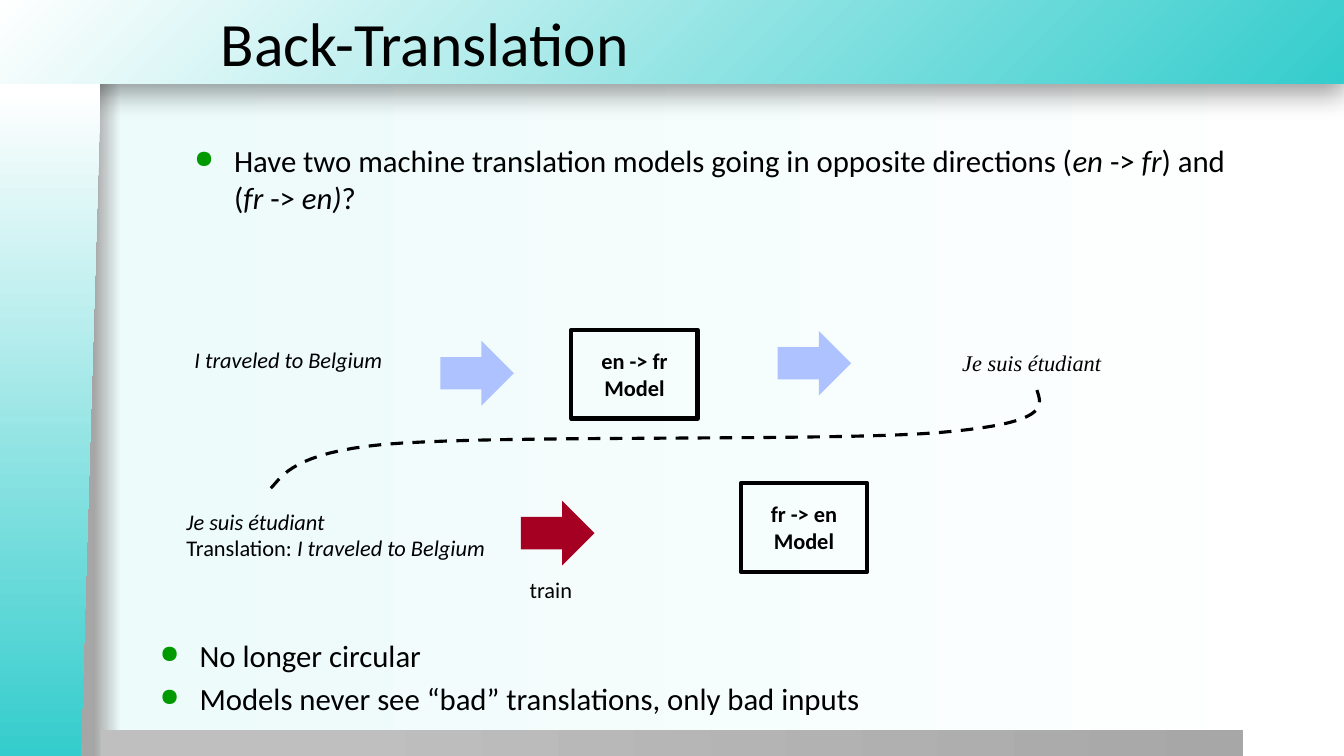
from lxml import etree
from pptx import Presentation
from pptx.dml.color import RGBColor
from pptx.enum.dml import MSO_LINE
from pptx.enum.shapes import MSO_SHAPE as Shape
from pptx.enum.text import MSO_ANCHOR as Anchor, PP_ALIGN as Align
from pptx.oxml import parse_xml
from pptx.oxml.ns import nsdecls, qn
from pptx.util import Cm, Pt

TEAL, WHITE, BLACK = "34CCCC", "FFFFFF", "000000"
BLUE, RED, GREEN = "ADC2FF", "A50021", "009900"
EN, FR = "I traveled to Belgium", "Je suis étudiant"


def color(value):
    return RGBColor.from_string(value)


def set_gradient(fill, parent, stops, direction):
    fill.solid()
    stop_xml = "".join(
        f'<a:gs pos="{position * 1000}"><a:srgbClr val="{value}"/></a:gs>'
        for position, value in stops
    )
    gradient = parse_xml(
        f'<a:gradFill {nsdecls("a")} rotWithShape="1">'
        f"<a:gsLst>{stop_xml}</a:gsLst>{direction}</a:gradFill>"
    )
    parent.replace(parent.find(qn("a:solidFill")), gradient)


def linear(degrees):
    return f'<a:lin ang="{degrees * 60000}" scaled="0"/>'


def add_block(page, kind, box, fill=None):
    block = page.shapes.add_shape(kind, *map(Cm, box))
    block.shadow.inherit = False
    block.line.fill.background()
    if fill:
        block.fill.solid()
        block.fill.fore_color.rgb = color(fill)
    else:
        block.fill.background()
    return block


def add_bullet(para):
    properties = para._p.get_or_add_pPr()
    properties.set("marL", str(Cm(1)))
    properties.set("indent", str(-Cm(1)))
    bullet_color = etree.SubElement(properties, qn("a:buClr"))
    etree.SubElement(bullet_color, qn("a:srgbClr"), val=GREEN)
    etree.SubElement(properties, qn("a:buSzPct"), val="80000")
    etree.SubElement(properties, qn("a:buChar"), char="●")


def write(frame, lines, size, font="Calibri", bold=False, bullets=False, align=Align.LEFT):
    for index, spans in enumerate(lines):
        para = frame.paragraphs[0] if index == 0 else frame.add_paragraph()
        if bullets:
            add_bullet(para)
            if index:
                para.space_before = Pt(size * 0.2)
        para.alignment = align
        para.font.size = Pt(size)
        para.font.name = font
        para.font.bold = bold
        para.font.color.rgb = color(BLACK)
        for text, italic in spans:
            span = para.add_run()
            span.text = text
            if italic:
                span.font.italic = True


def add_text(page, box, lines, size=16, wrap=True, anchor=Anchor.TOP, **style):
    frame = page.shapes.add_textbox(*map(Cm, box)).text_frame
    frame.word_wrap = wrap
    frame.vertical_anchor = anchor
    write(frame, lines, size, **style)


def add_model(page, left, top, direction):
    model = add_block(page, Shape.RECTANGLE, (left, top, 3.18, 2.24))
    model.line.color.rgb = color(BLACK)
    model.line.width = Pt(3)
    model.text_frame.vertical_anchor = Anchor.MIDDLE
    write(model.text_frame, [[(direction, False)], [("Model", False)]], 16,
          bold=True, align=Align.CENTER)


def add_arrow(page, left, top, fill):
    add_block(page, Shape.RIGHT_ARROW, (left, top, 1.85, 1.63), fill)


def add_backdrop(page, width, height, header_height, side_width):
    background = page.background.fill
    background.solid()
    set_gradient(background, page._element.xpath("p:cSld/p:bg/p:bgPr")[0],
                 [(7, "A6A6A6"), (9, "EDFBFB"), (100, WHITE)], linear(0))

    header = add_block(page, Shape.RECTANGLE, (0, 0, width, header_height))
    set_gradient(header.fill, header._element.spPr, [(0, TEAL), (100, WHITE)],
                 '<a:path path="circle"><a:fillToRect l="100000" t="100000"/></a:path>')
    effects = header._element.spPr.find(qn("a:effectLst"))
    shadow = etree.SubElement(effects, qn("a:outerShdw"), blurRad=str(Pt(20)),
                              dist=str(Pt(6)), dir="5400000", rotWithShape="0")
    shadow_color = etree.SubElement(shadow, qn("a:srgbClr"), val=BLACK)
    etree.SubElement(shadow_color, qn("a:alpha"), val="40000")

    footer = add_block(page, Shape.RECTANGLE, (side_width, height - 0.65, 28.78, 0.65))
    set_gradient(footer.fill, footer._element.spPr,
                 [(20, "BFBFBF"), (100, "A7A7A7")], linear(0))

    builder = page.shapes.build_freeform(0, Cm(header_height))
    corners = [(side_width, header_height), (side_width * 0.8, height), (0, height)]
    builder.add_line_segments([(Cm(x), Cm(y)) for x, y in corners], close=True)
    side = builder.convert_to_shape()
    side.shadow.inherit = False
    side.line.fill.background()
    set_gradient(side.fill, side._element.spPr, [(1, WHITE), (100, TEAL)], linear(90))


def add_forward_row(page, left, top):
    add_text(page, (left + 0.25, top + 0.28, 5.31, 0.94), [[(EN, True)]], wrap=False)
    add_arrow(page, left + 6.7, top + 0.28, BLUE)
    add_model(page, left + 10, top, "en -> fr")
    add_arrow(page, left + 15.2, top + 0.03, BLUE)
    add_text(page, (left + 19.6, top + 0.36, 4.06, 0.94), [[(FR, True)]],
             wrap=False, font="Times New Roman")


def add_training_row(page, left, top):
    add_text(page, (left + 0.05, top + 0.5, 8.15, 1.63),
             [[(FR, True)], [("Translation: ", False), (EN, True)]])
    add_arrow(page, left + 8.73, top + 0.45, RED)
    add_text(page, (left + 8.7, top + 2.23, 1.6, 0.94), [[("train", False)]], wrap=False)
    add_model(page, left + 14.27, top, "fr -> en")


def bezier(points, t):
    weights = ((1 - t) ** 3, 3 * t * (1 - t) ** 2, 3 * t * t * (1 - t), t ** 3)
    return tuple(Cm(sum(w * p[axis] for w, p in zip(weights, points))) for axis in (0, 1))


def add_feedback_curve(page, left, top, steps=20):
    controls = [(left + x, top + y) for x, y in [
        (19.48, 0), (19.63, 0.43), (19.76, 0.84), (17.02, 1.07), (14.27, 1.3),
        (5.87, 1.12), (3.02, 1.37), (0.2, 1.63), (0.43, 2.49), (0, 2.57)]]
    builder = page.shapes.build_freeform(*map(Cm, controls[0]))
    builder.add_line_segments(
        [bezier(controls[start:start + 4], step / steps)
         for start in (0, 3, 6) for step in range(1, steps + 1)], close=False)
    curve = builder.convert_to_shape()
    curve.shadow.inherit = False
    curve.fill.background()
    curve.line.color.rgb = color(BLACK)
    curve.line.width = Pt(2.25)
    curve.line.dash_style = MSO_LINE.DASH


def main():
    deck = Presentation()
    deck.slide_width, deck.slide_height = Cm(33.87), Cm(19.05)
    page = deck.slides.add_slide(deck.slide_layouts[6])
    add_backdrop(page, 33.87, 19.05, 2.11, 2.54)
    add_text(page, (5.31, 0, 28.56, 2.11), [[("Back-Translation", False)]],
             size=44, anchor=Anchor.MIDDLE)
    add_text(page, (4.65, 3.45, 26.67, 2.57), [[
        ("Have two machine translation models going in opposite directions (", False),
        ("en ", True), ("-> ", False), ("fr", True), (") and (", False),
        ("fr ", True), ("-> ", False), ("en)", True), ("?", False)]],
        size=22, bullets=True)
    add_forward_row(page, 4.4, 8.31)
    add_training_row(page, 4.4, 12.17)
    add_feedback_curve(page, 6.65, 9.83)
    add_text(page, (3.78, 15.93, 26.67, 2.57), [
        [("No longer circular", False)],
        [("Models never see “bad” translations, only bad inputs", False)]],
        size=22, bullets=True)
    deck.save("out.pptx")


if __name__ == "__main__":
    main()
